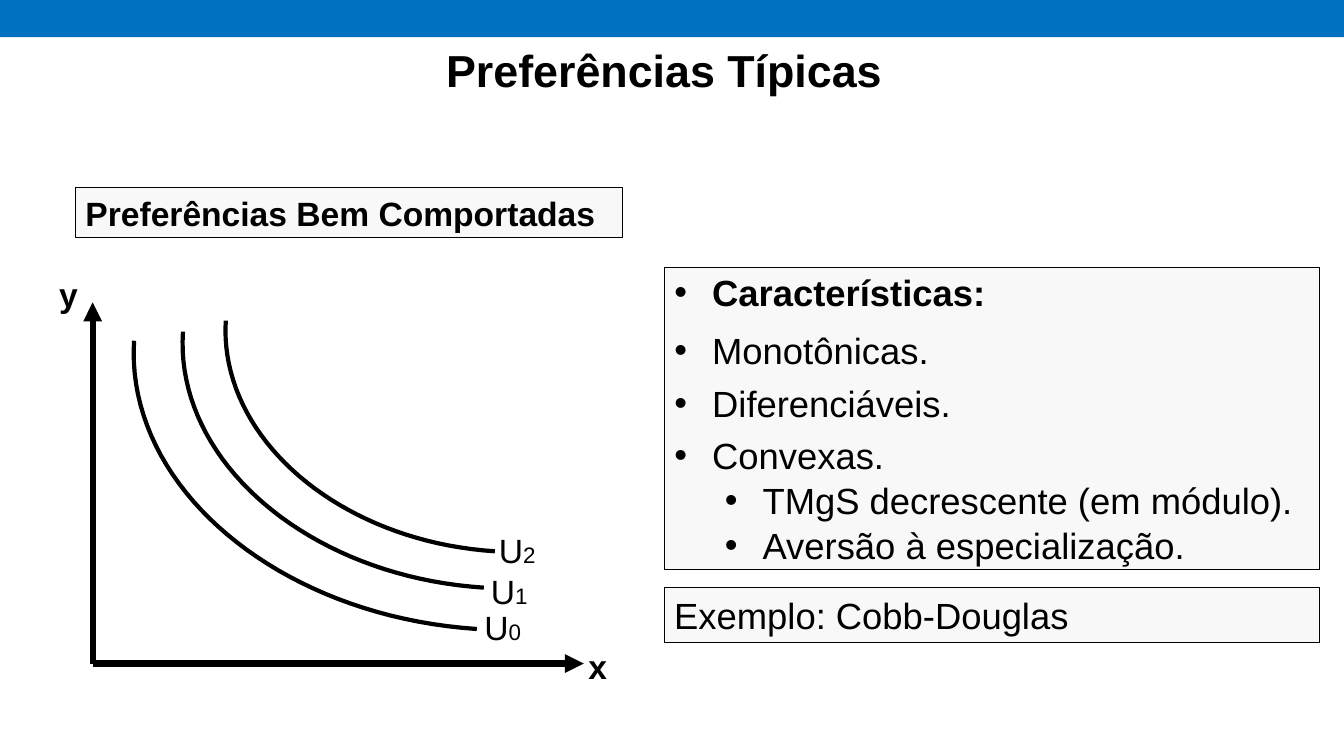
"""Build the slide on typical preferences with its indifference curves."""
from lxml import etree
from pptx import Presentation
from pptx.dml.color import RGBColor
from pptx.enum.shapes import MSO_CONNECTOR, MSO_SHAPE
from pptx.enum.text import MSO_ANCHOR, MSO_AUTO_SIZE, PP_ALIGN
from pptx.oxml.ns import qn
from pptx.util import Pt

STRAIGHT = MSO_CONNECTOR.STRAIGHT
RECTANGLE = MSO_SHAPE.RECTANGLE
MIDDLE, BOTTOM = MSO_ANCHOR.MIDDLE, MSO_ANCHOR.BOTTOM
NO_AUTOFIT = MSO_AUTO_SIZE.NONE
LEFT, CENTER, RIGHT = PP_ALIGN.LEFT, PP_ALIGN.CENTER, PP_ALIGN.RIGHT

BLACK = RGBColor(0x00, 0x00, 0x00)
BLUE = RGBColor(0x00, 0x70, 0xC0)
PALE_GREY = RGBColor(0xF8, 0xF8, 0xF8)
FONT = "Arial"

TITLE = "Preferências Típicas"
HEADING = "Preferências Bem Comportadas"
EXAMPLE = "Exemplo: Cobb-Douglas"
# (text, level, bold, space before)
FEATURES = [
    ("Características:", 0, True, 0),
    ("Monotônicas.", 0, False, 10.5),
    ("Diferenciáveis.", 0, False, 6),
    ("Convexas.", 0, False, 6),
    ("TMgS decrescente (em módulo).", 1, False, 1),
    ("Aversão à especialização.", 1, False, 1),
]
ORIGIN = (66.2, 474)
AXES = [
    ("y", (66.2, 216), (34.6, 192.2), RIGHT),
    ("x", (417, 474), (413.3, 458), LEFT),
]
CURVES = [
    ("0", (339, 430), [(340.6, 449.3), (198.7, 439.9), (89.3, 347.8), (95.8, 243.4)]),
    ("1", (343.5, 404), [(345.6, 419.8), (221, 411.8), (124.6, 329.8), (130.7, 236.9)]),
    ("2", (349.2, 375), [(353.5, 393.8), (241.9, 386.6), (156.2, 312.5), (161.3, 229)]),
]
CURVE_STEPS = 40


def place(shape, left, top, width, height):
    shape.left, shape.top = Pt(left), Pt(top)
    shape.width, shape.height = Pt(width), Pt(height)


def add_run(paragraph, text, size, bold=False):
    run = paragraph.add_run()
    run.text = text
    run.font.name = FONT
    run.font.size = Pt(size)
    run.font.bold = bold
    run.font.color.rgb = BLACK


def set_frame(shape, anchor=MIDDLE):
    frame = shape.text_frame
    frame.word_wrap = True
    frame.auto_size = NO_AUTOFIT
    frame.vertical_anchor = anchor
    return frame


def outline_box(shape):
    shape.fill.solid()
    shape.fill.fore_color.rgb = PALE_GREY
    shape.line.color.rgb = BLACK
    shape.line.width = Pt(0.75)


def add_box(slide, left, top, width, height, text, size, bold):
    box = slide.shapes.add_shape(RECTANGLE, Pt(left), Pt(top), Pt(width), Pt(height))
    box.shadow.inherit = False
    outline_box(box)
    paragraph = set_frame(box).paragraphs[0]
    paragraph.alignment = LEFT
    add_run(paragraph, text, size, bold)


def add_label(slide, corner, width, runs, bold=False, alignment=LEFT):
    left, top = corner
    label = slide.shapes.add_textbox(Pt(left), Pt(top), Pt(width), Pt(36))
    paragraph = set_frame(label).paragraphs[0]
    paragraph.alignment = alignment
    for text, size in runs:
        add_run(paragraph, text, size, bold)


def add_axis(slide, end):
    axis = slide.shapes.add_connector(STRAIGHT, *map(Pt, ORIGIN + end))
    axis.line.color.rgb = BLACK
    axis.line.width = Pt(4.5)
    properties = axis._element.spPr
    etree.SubElement(properties.find(qn("a:ln")), qn("a:tailEnd"), type="triangle")
    etree.SubElement(properties, qn("a:effectLst"))


def curve_point(controls, t):
    weights = ((1 - t) ** 3, 3 * t * (1 - t) ** 2, 3 * t ** 2 * (1 - t), t ** 3)
    return tuple(Pt(sum(w * c for w, c in zip(weights, axis))) for axis in zip(*controls))


def add_curve(slide, controls):
    points = [curve_point(controls, step / CURVE_STEPS) for step in range(CURVE_STEPS + 1)]
    builder = slide.shapes.build_freeform(*points[0])
    builder.add_line_segments(points[1:], close=False)
    curve = builder.convert_to_shape()
    curve.shadow.inherit = False
    curve.fill.background()
    curve.line.color.rgb = BLACK
    curve.line.width = Pt(3)


def fill_features(features):
    place(features, 474.5, 190.8, 468, 216)
    outline_box(features)
    frame = set_frame(features)
    for index, (text, level, bold, space) in enumerate(FEATURES):
        paragraph = frame.add_paragraph() if index else frame.paragraphs[0]
        paragraph.level = level
        properties = paragraph._p.get_or_add_pPr()
        properties.set("marL", str(Pt(27 + 36 * level)))
        properties.set("indent", str(Pt(-27)))
        etree.SubElement(properties, qn("a:buFont"), typeface=FONT)
        etree.SubElement(properties, qn("a:buChar"), char="•")
        paragraph.alignment = LEFT
        paragraph.space_before = Pt(space)
        add_run(paragraph, text, 26, bold)


def main():
    deck = Presentation()
    deck.slide_width, deck.slide_height = Pt(960), Pt(540)
    slide = deck.slides.add_slide(deck.slide_layouts[1])
    title, features = slide.placeholders

    place(title, 53.3, 10.8, 842.4, 61.9)
    heading = set_frame(title, BOTTOM).paragraphs[0]
    heading.alignment = CENTER
    add_run(heading, TITLE, 32, True)
    fill_features(features)

    band = slide.shapes.add_shape(RECTANGLE, 0, 0, deck.slide_width, Pt(26.6))
    band.shadow.inherit = False
    band.fill.solid()
    band.fill.fore_color.rgb = BLUE
    band.line.fill.background()

    add_box(slide, 54, 133.9, 391, 36, HEADING, 24, True)
    add_box(slide, 474.5, 419.8, 468, 38.9, EXAMPLE, 26, False)

    for name, end, corner, alignment in AXES:
        add_axis(slide, end)
        add_label(slide, corner, 28, [(name, 24)], True, alignment)
    for index, corner, controls in CURVES:
        add_curve(slide, controls)
        add_label(slide, corner, 91.4, [("U", 24), (index, 16)])

    deck.save("out.pptx")


if __name__ == "__main__":
    main()
